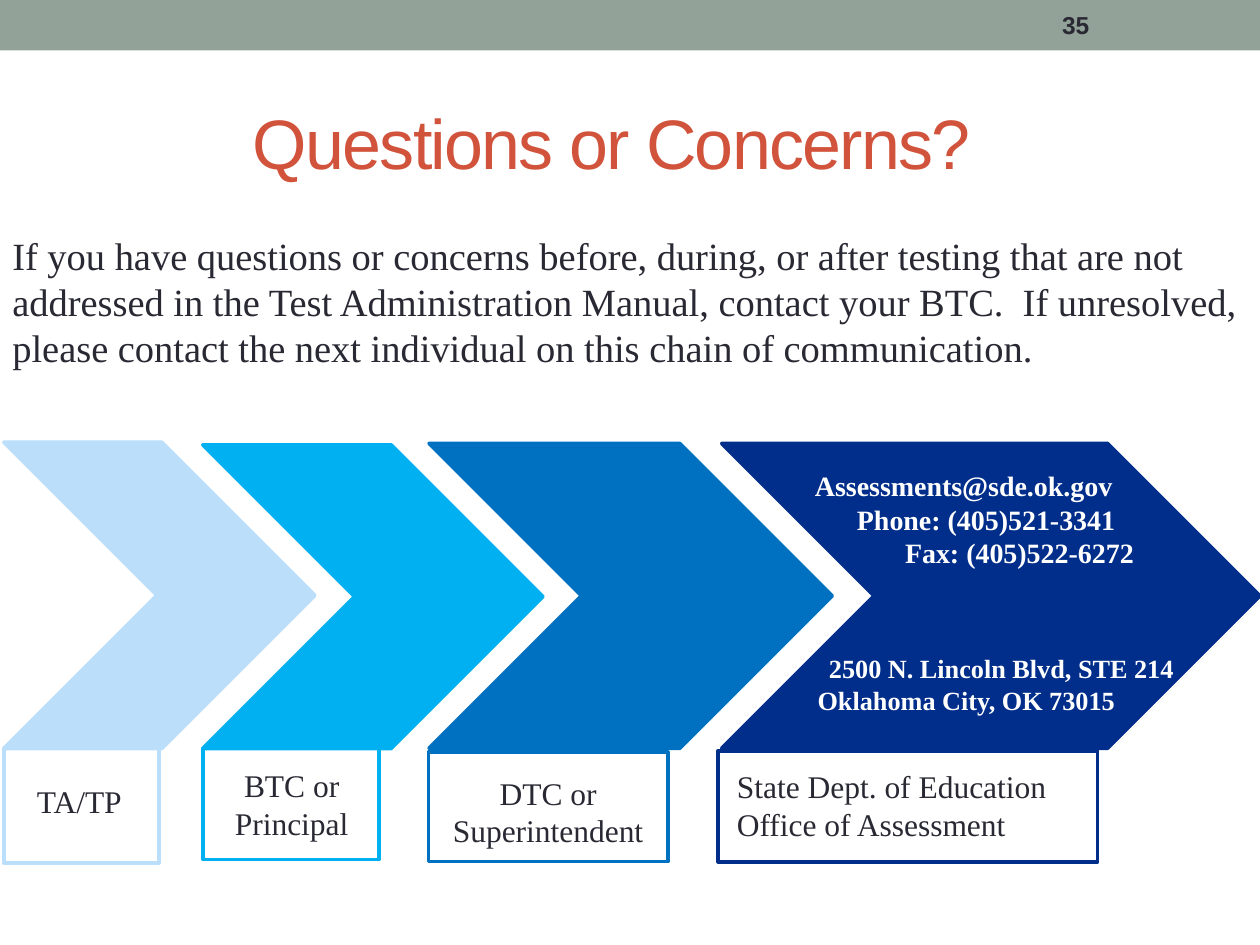
from pptx import Presentation
from pptx.dml.color import RGBColor
from pptx.enum.shapes import MSO_SHAPE
from pptx.enum.text import MSO_ANCHOR, PP_ALIGN
from pptx.util import Pt

RECT, CHEVRON = MSO_SHAPE.RECTANGLE, MSO_SHAPE.CHEVRON
LEFT, MID = PP_ALIGN.LEFT, PP_ALIGN.CENTER
TOP, CENTER = MSO_ANCHOR.TOP, MSO_ANCHOR.MIDDLE
SANS, SERIF = "Arial", "Times New Roman"
DARK, WHITE = "292934", "FFFFFF"

BAR = ("93A299", (0, 0, 720, 28.8))
TITLE = ("Questions or Concerns?", (36, 41.8, 648, 77.8))
PAGE = ("35", (599.8, 1.4, 84.2, 25.9))
INTRO = (
    "If you have questions or concerns before, during, or after testing "
    "that are not addressed in the Test Administration Manual, contact "
    "your BTC.  If unresolved, please contact the next individual on "
    "this chain of communication.",
    (0, 128.9, 720, 87.1),
)
STEPS = [
    ("TA/TP", "BBDEFB", MID, (2.2, 252.7, 177.8, 175),
     (2.2, 427.7, 88.6, 65.5), (0, 443.5, 90.7, 28.8)),
    ("BTC or Principal", "00B0F0", MID, (115.9, 254.2, 194.4, 173.5),
     (115.9, 427.7, 100.8, 63.4), (100.8, 434.2, 131.8, 51.1)),
    ("DTC or Superintendent", "0070C0", MID, (245.2, 253.4, 230.4, 174.2),
     (244.8, 429.8, 136.8, 62.6), (241.9, 438.5, 142.6, 51.1)),
    ("State Dept. of Education Office of Assessment", "002E8A", LEFT,
     (412.4, 253.4, 307.6, 174.2), (410.4, 429.1, 216.7, 63.4),
     (414, 434.9, 223.2, 51.1)),
]
NOTES = [
    (16, (458.6, 264.2, 255.6, 65.5),
     [("Assessments@sde.ok.gov", 0), ("Phone: (405)521-3341", 24),
      ("Fax: (405)522-6272", 51.5)]),
    (15, (448.6, 369.3, 241.2, 45),
     [("2500 N. Lincoln Blvd, STE 214", 18),
      ("Oklahoma City, OK 73015", 11.5)]),
]


def hue(code):
    return RGBColor.from_string(code)


def put(item, fmt):
    for key, val in fmt.items():
        setattr(item, key, val)


def place(box):
    return [Pt(n) for n in box]


def write(shape, rows, size, color=DARK, face=SERIF, bold=False,
          align=LEFT, anchor=TOP):
    frame = shape.text_frame
    put(frame, {"word_wrap": True, "vertical_anchor": anchor})
    for i, (text, dent) in enumerate(rows):
        para = frame.add_paragraph() if i else frame.paragraphs[0]
        para.alignment = align
        if dent:
            para._p.get_or_add_pPr().set("marL", str(Pt(dent)))
        run = para.add_run()
        run.text = text
        put(run.font, {"size": Pt(size), "name": face, "bold": bold})
        run.font.color.rgb = hue(color)


def label(slide, box, rows, size, **fmt):
    write(slide.shapes.add_textbox(*place(box)), rows, size, **fmt)


def draw(slide, kind, box, fill=None, line=None):
    shape = slide.shapes.add_shape(kind, *place(box))
    shape.shadow.inherit = False
    if fill:
        shape.fill.solid()
        shape.fill.fore_color.rgb = hue(fill)
    else:
        shape.fill.background()
    if line:
        shape.line.color.rgb = hue(line)
        shape.line.width = Pt(2.08)
    else:
        shape.line.fill.background()


def main():
    deck = Presentation()
    put(deck, {"slide_width": Pt(720), "slide_height": Pt(540)})
    slide = deck.slides.add_slide(deck.slide_layouts[5])
    draw(slide, RECT, BAR[1], BAR[0])

    text, box = TITLE
    title = slide.shapes.title
    put(title, dict(zip(("left", "top", "width", "height"), place(box))))
    title.text_frame.margin_right = Pt(28.2)
    write(title, [(text, 0)], 40, "D2533C", SANS, align=MID, anchor=CENTER)
    run = title.text_frame.paragraphs[0].runs[0]
    run.font._element.set("spc", "-100")

    text, box = PAGE
    label(slide, box, [(text, 0)], 14, face=SANS, bold=True, anchor=CENTER)
    text, box = INTRO
    label(slide, box, [(text, 0)], 22)

    for text, color, align, arrow, frame, box in STEPS:
        draw(slide, RECT, frame, line=color)
        draw(slide, CHEVRON, arrow, color, color)
        label(slide, box, [(text, 0)], 18, align=align)
    for size, box, rows in NOTES:
        label(slide, box, rows, size, color=WHITE, bold=True)
    deck.save("out.pptx")


if __name__ == "__main__":
    main()
